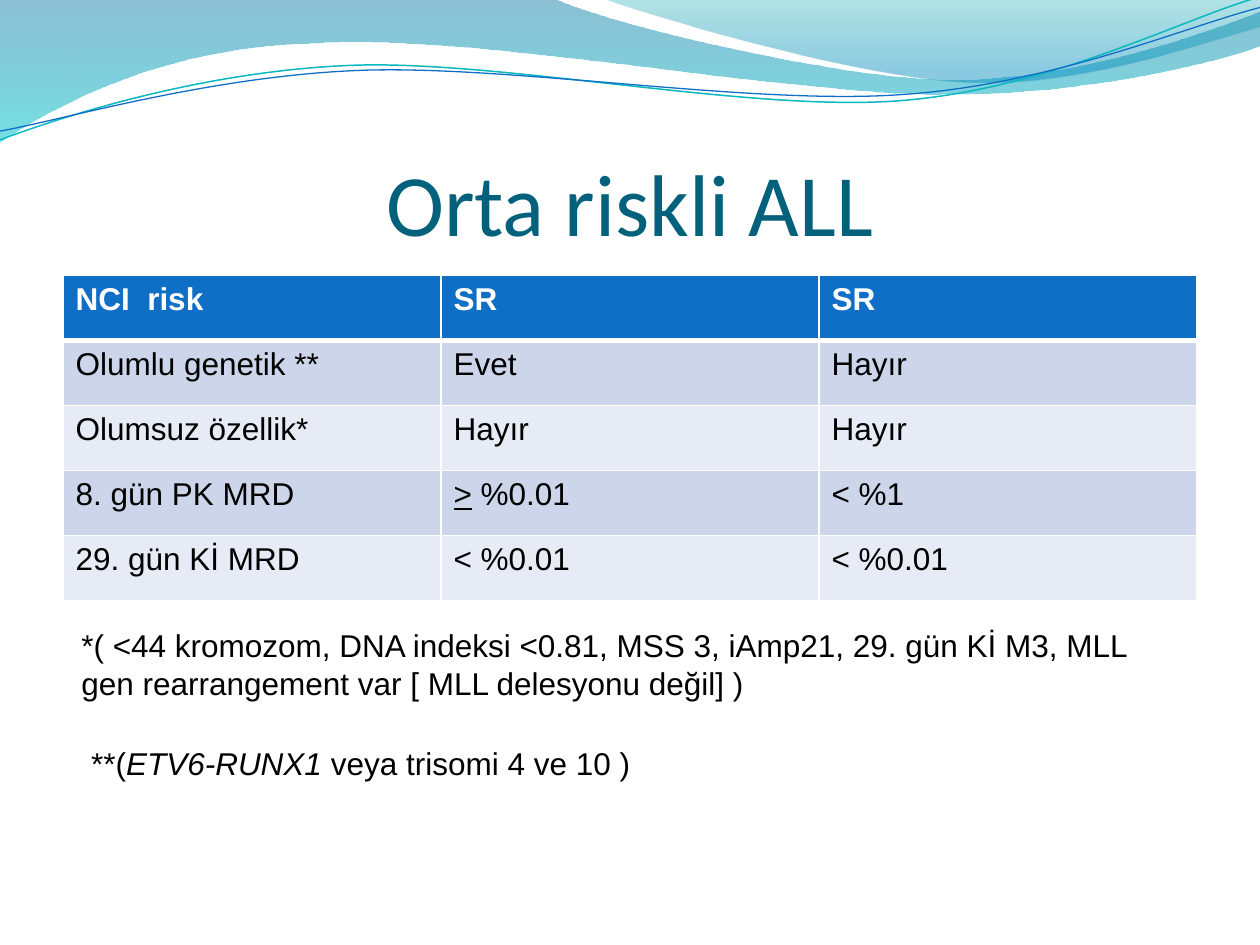
import math

from lxml import etree
from pptx import Presentation, util as u
from pptx.dml.color import RGBColor
from pptx.enum import text
from pptx.oxml.ns import qn

COLORS = {
    "title": "04617B", "ink": "000000", "white": "FFFFFF", "header": "0F6FC6",
    "dark_band": "CCD5EA", "light_band": "E7EBF5", "teal_line": "0AB8BF",
    "deep": "0074A1", "aqua": "00C6CF", "sea": "00A1A9", "sky": "008BBF",
}

TITLE = [("Orta riskli ALL", "")]
ROWS = [
    ["NCI  risk", "SR", "SR"],
    ["Olumlu genetik **", "Evet", "Hayır"],
    ["Olumsuz özellik*", "Hayır", "Hayır"],
    ["8. gün PK MRD", [(">", "u"), (" %0.01", "")], "< %1"],
    ["29. gün Kİ MRD", "< %0.01", "< %0.01"],
]
NOTES = [
    ((39.4, 354.24, 635.76, 51.12),
     [("*( <44 kromozom, DNA indeksi <0.81, MSS 3, iAmp21, 29. gün Kİ M3, MLL "
       "gen rearrangement var [ MLL delesyonu değil] )", "")]),
    ((45, 421.92, 607.68, 28.8),
     [("**(", ""), ("ETV6-RUNX1", "i"), (" veya trisomi 4 ve 10 )", "")]),
]

WAVES = [
    {"steps": [(0, 0), (316.8, -0.7), (342.7, 12.2, 478.1, 45.4, 545.8, 45.4),
               (614.2, 45.4, 689.8, 18.7, 720, 6.5), (720.7, 25.9),
               (707.8, 31.7, 626.4, 54.7, 537.1, 54),
               (447.8, 54, 275, 20.2, 185, 24.5),
               (92.9, 25.9, 33.1, 59.8, -0.7, 81.4), (0, 0)],
     "stops": [(0, "deep", 45), (1, "aqua", 55)]},
    {"steps": [(344.9, -0.7), (366.5, 7.9, 491, 44.6, 553.7, 46.8),
               (616.3, 49.7, 691.9, 23, 720, 15.1), (720, 0), (344.9, -0.7)],
     "stops": [(0, "sea", 30), (0.8, "sky", 45)]},
    {"steps": [(0, 79.9), (34.6, 67, 113.8, 41, 199.4, 37.4),
               (284.4, 33.8, 427, 64.1, 513.4, 57.6),
               (599.8, 51.1, 675.4, 10.8, 718.6, -1.4)],
     "line": ("teal_line", 0.85), "center": (359.28, 41.4)},
    {"steps": [(0, 74.9), (33.8, 69.1, 118.1, 43.9, 203.8, 40.3),
               (290.2, 36.7, 429.8, 60.5, 516.2, 54),
               (601.9, 48.2, 677.5, 15.1, 720, 4.3)],
     "line": ("header", 0.75), "center": (359.64, 42.48)},
]
TILT = 2.7


def rgb(name):
    return RGBColor.from_string(COLORS[name])


def level(point, center):
    angle = math.radians(TILT)
    x, y = point[0] - center[0], point[1] - center[1]
    return (center[0] + x * math.cos(angle) - y * math.sin(angle),
            center[1] + x * math.sin(angle) + y * math.cos(angle))


def draw_outline(page, steps, center):
    points = [pair for step in steps for pair in zip(step[::2], step[1::2])]
    if center:
        points = [level(point, center) for point in points]
    points = [(u.Pt(x), u.Pt(y)) for x, y in points]
    builder = page.shapes.build_freeform(*points[0])
    builder.add_line_segments(points[1:], close=False)
    wave = builder.convert_to_shape()
    segments = iter(list(wave._element.iter(qn("a:lnTo"))))
    for step in steps[1:]:
        segment = next(segments)
        if len(step) == 6:
            curve = etree.Element(qn("a:cubicBezTo"))
            segment.addprevious(curve)
            for part in (segment, next(segments), next(segments)):
                curve.append(part[0])
                part.getparent().remove(part)
    if center:
        wave.rotation = 360 - TILT
    return wave


def add_wave(page, steps, stops=None, line=None, center=None):
    wave = draw_outline(page, steps, center)
    wave.shadow.inherit = False
    if line:
        wave.fill.background()
        wave.line.color.rgb = rgb(line[0])
        wave.line.width = u.Pt(line[1])
        return
    etree.SubElement(next(wave._element.iter(qn("a:path"))), qn("a:close"))
    wave.line.fill.background()
    wave.fill.gradient()
    wave.fill.gradient_angle = 270
    for stop, (position, color, _) in zip(wave.fill.gradient_stops, stops):
        stop.position = position
        stop.color.rgb = rgb(color)
    fills = wave._element.spPr.find(qn("a:gradFill")).iter(qn("a:srgbClr"))
    for color, (_, _, opacity) in zip(fills, stops):
        etree.SubElement(color, qn("a:alpha"), val=str(opacity * 1000))


def write(frame, runs, *, size=18, font="Arial", color="ink", bold=False,
          align=text.PP_ALIGN.LEFT):
    frame.word_wrap = True
    para = frame.paragraphs[0]
    para.alignment = align
    for words, style in runs:
        span = para.add_run()
        span.text = words
        span.font.size = u.Pt(size)
        span.font.name = font
        span.font.color.rgb = rgb(color)
        span.font.bold = bold
        span.font.italic = "i" in style
        span.font.underline = "u" in style


def add_box(page, place, runs, **format):
    box = page.shapes.add_textbox(*map(u.Pt, place))
    write(box.text_frame, runs, **format)
    return box.text_frame


def set_borders(cell, widths):
    for side, width in widths.items():
        edge = etree.SubElement(cell._tc.get_or_add_tcPr(), qn(f"a:ln{side}"),
                                w=str(u.Pt(width)))
        fill = etree.SubElement(edge, qn("a:solidFill"))
        etree.SubElement(fill, qn("a:srgbClr"), val=COLORS["white"])


def add_risk_table(page):
    place = (36, 157.4, 648, 185.76)
    table = page.shapes.add_table(len(ROWS), len(ROWS[0]), *map(u.Pt, place)).table
    for r, row in enumerate(ROWS):
        header = r == 0
        band = "header" if header else ("light_band", "dark_band")[r % 2]
        for c, value in enumerate(row):
            cell = table.cell(r, c)
            set_borders(cell, {"L": 1, "R": 1, "T": 3 if r == 1 else 1,
                               "B": 3 if header else 1})
            cell.fill.solid()
            cell.fill.fore_color.rgb = rgb(band)
            runs = [(value, "")] if isinstance(value, str) else value
            write(cell.text_frame, runs, bold=header,
                  color="white" if header else "ink")


def main():
    deck = Presentation()
    deck.slide_width, deck.slide_height = u.Pt(720), u.Pt(540)
    page = deck.slides.add_slide(deck.slide_layouts[6])
    for wave in WAVES:
        add_wave(page, **wave)
    title = add_box(page, (36, 55, 648, 90), TITLE, size=50, font="Calibri",
                    color="title", align=text.PP_ALIGN.CENTER)
    title.vertical_anchor = text.MSO_ANCHOR.BOTTOM
    title.margin_left = title.margin_right = title.margin_bottom = 0
    add_risk_table(page)
    for place, runs in NOTES:
        add_box(page, place, runs)
    deck.save("out.pptx")


if __name__ == "__main__":
    main()
